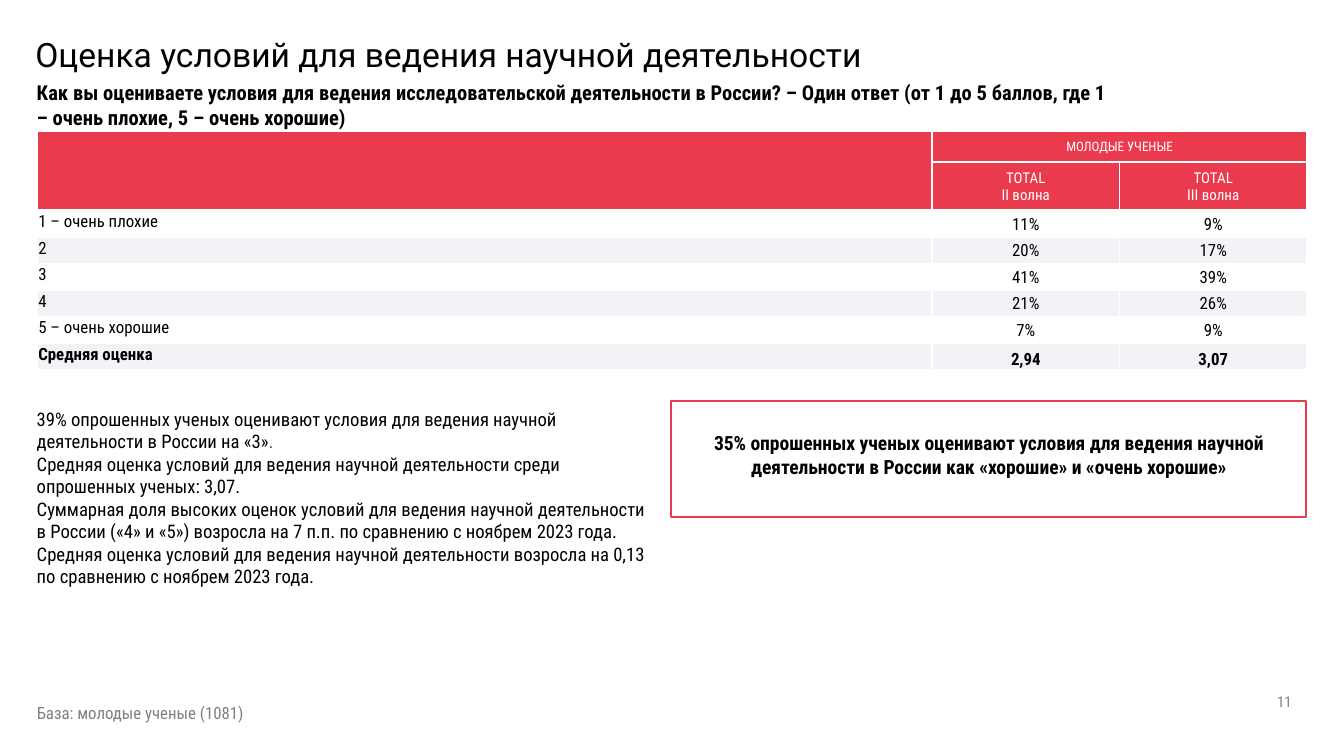
from dataclasses import dataclass
from typing import Optional

from lxml import etree
from pptx import Presentation
from pptx import util as u
from pptx.dml.color import RGBColor
from pptx.enum import shapes, text
from pptx.oxml.ns import qn

PX = 4572  # EMU per px, 200 px to the inch


@dataclass(frozen=True)
class Theme:
    red: str = "E93A4E"
    band: str = "F2F3F6"
    white: str = "FFFFFF"
    black: str = "000000"
    grey: str = "808080"
    dark_grey: str = "595959"
    heading_font: str = "Roboto"
    body_font: str = "Roboto Condensed"
    title: float = 18
    question: float = 11
    callout: float = 10.5
    body: float = 10
    small: float = 9
    header: float = 8
    group: float = 7


THEME = Theme()
LEFT, CENTER, RIGHT = text.PP_ALIGN.LEFT, text.PP_ALIGN.CENTER, text.PP_ALIGN.RIGHT
TOP, MIDDLE, BOTTOM = text.MSO_ANCHOR.TOP, text.MSO_ANCHOR.MIDDLE, text.MSO_ANCHOR.BOTTOM


@dataclass(frozen=True)
class TextStyle:
    size: float
    color: str = THEME.black
    bold: bool = False
    align: text.PP_ALIGN = LEFT
    anchor: text.MSO_ANCHOR = TOP
    font: str = THEME.body_font


@dataclass(frozen=True)
class TextBlock:
    words: str
    box: tuple[int, int, int, int]
    style: TextStyle
    inset_y: int = 10
    spacing: object = None


@dataclass(frozen=True)
class Answer:
    label: str
    second_wave: str
    third_wave: str
    total: bool = False


def px(value: int) -> u.Emu:
    return u.Emu(value * PX)


def style_text(frame, style: TextStyle) -> None:
    frame.vertical_anchor = style.anchor
    for paragraph in frame.paragraphs:
        paragraph.alignment = style.align
        for run in paragraph.runs:
            run.font.name = style.font
            run.font.size = u.Pt(style.size)
            run.font.bold = style.bold
            run.font.color.rgb = RGBColor.from_string(style.color)


def draw_text(slide, block: TextBlock):
    frame = slide.shapes.add_textbox(*map(px, block.box)).text_frame
    frame.word_wrap = True
    frame.margin_top = frame.margin_bottom = px(block.inset_y)
    frame.text = block.words
    style_text(frame, block.style)
    if block.spacing:
        for paragraph in frame.paragraphs:
            paragraph.line_spacing = block.spacing
    return frame


def draw_cell(cell, words: str, style: TextStyle, fill: Optional[str]) -> None:
    cell.margin_left = cell.margin_right = cell.margin_top = px(2)
    cell.margin_bottom = 0
    cell.text_frame.text = words
    style_text(cell.text_frame, style)
    cell.vertical_anchor = style.anchor
    # White borders come before the fill in the cell properties
    properties = cell._tc.get_or_add_tcPr()
    for side in ("lnL", "lnR", "lnT", "lnB"):
        border = etree.SubElement(properties, qn(f"a:{side}"), w=str(u.Pt(1)))
        solid = etree.SubElement(border, qn("a:solidFill"))
        etree.SubElement(solid, qn("a:srgbClr"), val=THEME.white)
    if fill:
        cell.fill.solid()
        cell.fill.fore_color.rgb = RGBColor.from_string(fill)
    else:
        cell.fill.background()


def draw_ratings(slide, answers: list[Answer]) -> None:
    columns = (1332, 279, 279)
    rows = (45, 72) + (40, 39) * (len(answers) // 2)
    table = slide.shapes.add_table(len(rows), len(columns), px(55), px(196),
                                   px(sum(columns)), px(sum(rows))).table
    table.first_row = table.horz_banding = False
    for column, width in zip(table.columns, columns):
        column.width = px(width)
    for row, height in zip(table.rows, rows):
        row.height = px(height)

    # Header
    headers = (("", "МОЛОДЫЕ УЧЕНЫЕ", ""),
               ("", "TOTAL\nII волна", "TOTAL\nIII волна"))
    for r, (labels, size) in enumerate(zip(headers, (THEME.group, THEME.header))):
        style = TextStyle(size, THEME.white, align=CENTER, anchor=MIDDLE)
        for c, label in enumerate(labels):
            draw_cell(table.cell(r, c), label, style, THEME.red)
    table.cell(0, 0).merge(table.cell(1, 0))
    table.cell(0, 1).merge(table.cell(0, 2))

    # Answers
    for i, answer in enumerate(answers):
        fill = THEME.band if i % 2 else None
        label_style = TextStyle(THEME.small, bold=answer.total)
        value_style = TextStyle(THEME.small, bold=answer.total, align=CENTER,
                                anchor=BOTTOM if answer.total else MIDDLE)
        draw_cell(table.cell(i + 2, 0), answer.label, label_style, fill)
        for c, value in enumerate((answer.second_wave, answer.third_wave), 1):
            draw_cell(table.cell(i + 2, c), value, value_style, fill)


ANSWERS = [
    Answer("1 – очень плохие", "11%", "9%"),
    Answer("2", "20%", "17%"),
    Answer("3", "41%", "39%"),
    Answer("4", "21%", "26%"),
    Answer("5 – очень хорошие", "7%", "9%"),
    Answer("Средняя оценка", "2,94", "3,07", total=True),
]

TITLE = TextBlock("Оценка условий для ведения научной деятельности", (33, 30, 1724, 106),
                  TextStyle(THEME.title, anchor=MIDDLE, font=THEME.heading_font),
                  spacing=u.Pt(20))
QUESTION = TextBlock(
    "Как вы оцениваете условия для ведения исследовательской деятельности в России? – "
    "Один ответ (от 1 до 5 баллов, где 1 – очень плохие, 5 – очень хорошие)",
    (35, 98, 1648, 90), TextStyle(THEME.question, bold=True), inset_y=20, spacing=1.02)
CALLOUT = TextBlock(
    "35% опрошенных ученых оценивают условия для ведения научной деятельности "
    "в России как «хорошие» и «очень хорошие»",
    (999, 632, 946, 90), TextStyle(THEME.callout, bold=True, align=CENTER))
FINDINGS = TextBlock("\n".join((
    "39% опрошенных ученых оценивают условия для ведения научной деятельности "
    "в России на «3»",
    "Средняя оценка условий для ведения научной деятельности среди опрошенных ученых: 3,07.",
    "Суммарная доля высоких оценок условий для ведения научной деятельности в России "
    "(«4» и «5») возросла на 7 п.п. по сравнению с ноябрем 2023 года.",
    "Средняя оценка условий для ведения научной деятельности возросла на 0,13 "
    "по сравнению с ноябрем 2023 года.")),
    (35, 597, 960, 290), TextStyle(THEME.body))
SAMPLE = TextBlock("База: молодые ученые (1081)", (35, 1036, 964, 50),
                   TextStyle(THEME.small, THEME.grey))
PAGE = TextBlock("11", (1492, 1014, 450, 60),
                 TextStyle(THEME.header, THEME.grey, align=RIGHT, anchor=MIDDLE))


def main() -> None:
    deck = Presentation()
    deck.slide_width, deck.slide_height = px(2000), px(1125)
    slide = deck.slides.add_slide(deck.slide_layouts[6])

    # Callout frame
    frame = slide.shapes.add_shape(shapes.MSO_SHAPE.RECTANGLE,
                                   px(998), px(597), px(946), px(172))
    frame.shadow.inherit = False
    frame.fill.background()
    frame.line.color.rgb = RGBColor.from_string(THEME.red)
    frame.line.width = u.Pt(1)

    # Table and texts
    draw_ratings(slide, ANSWERS)
    for block in (TITLE, QUESTION, CALLOUT, SAMPLE, PAGE):
        draw_text(slide, block)

    # Findings, with a lighter full stop after the first
    findings = draw_text(slide, FINDINGS)
    full_stop = findings.paragraphs[0].add_run()
    full_stop.text = "."
    full_stop.font.name = THEME.body_font
    full_stop.font.size = u.Pt(THEME.body)
    full_stop.font.color.rgb = RGBColor.from_string(THEME.dark_grey)

    deck.save("out.pptx")


if __name__ == "__main__":
    main()
